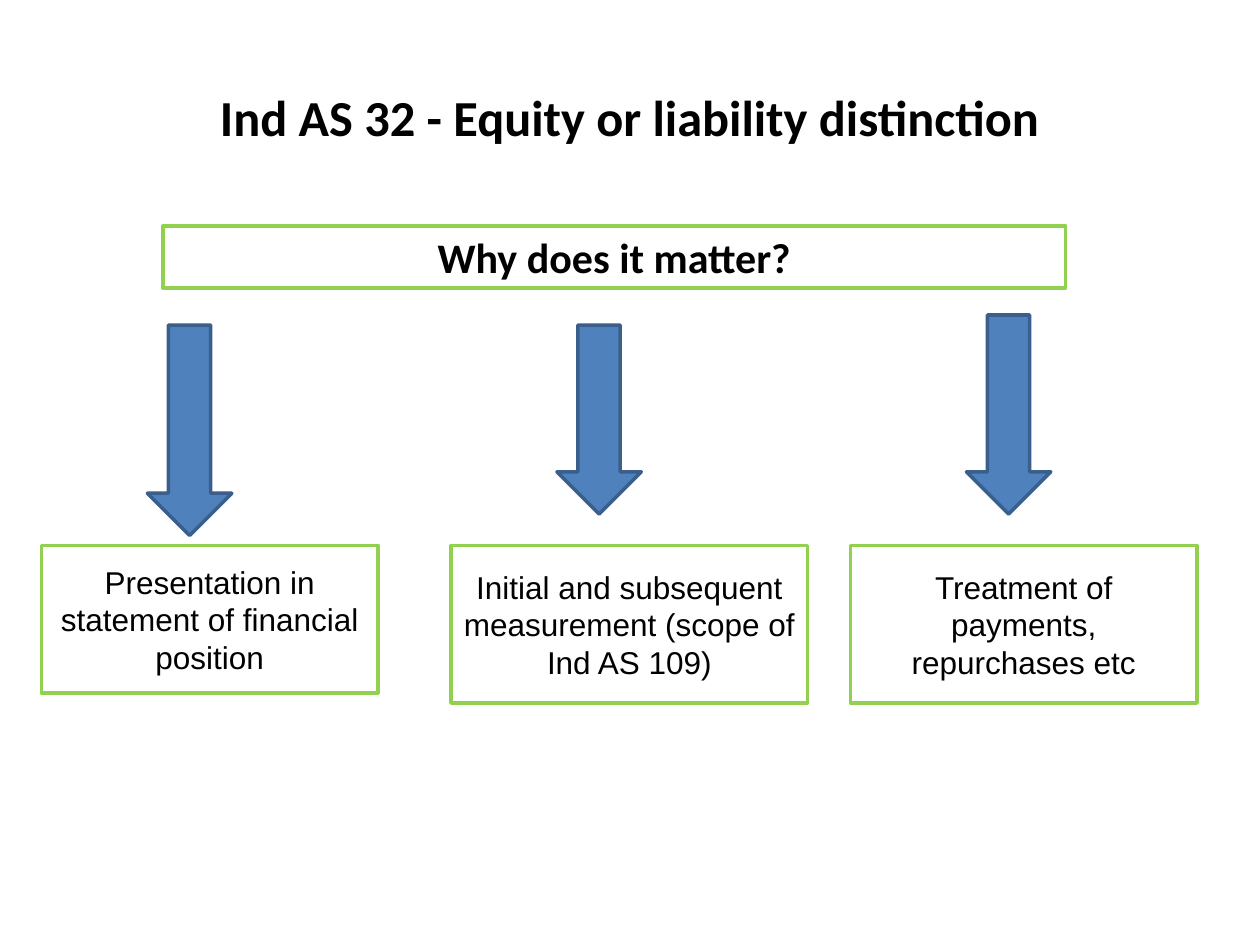
from pptx import Presentation
from pptx.dml.color import RGBColor
from pptx.enum.shapes import MSO_SHAPE
from pptx.enum.text import MSO_ANCHOR, PP_ALIGN
from pptx.util import Inches, Pt

BLACK = RGBColor(0x00, 0x00, 0x00)
WHITE = RGBColor(0xFF, 0xFF, 0xFF)
GREEN = RGBColor(0x92, 0xD0, 0x50)
BLUE = RGBColor(0x4F, 0x81, 0xBD)
DARK_BLUE = RGBColor(0x3A, 0x5F, 0x8C)


def add_box(page, kind, left, top, width, height, fill, line):
    box = page.shapes.add_shape(
        kind, Inches(left), Inches(top), Inches(width), Inches(height))
    box.shadow.inherit = False
    box.fill.solid()
    box.fill.fore_color.rgb = fill
    box.line.color.rgb = line
    box.line.width = Pt(2)
    return box


def write_text(box, text, font_name, size, bold=False):
    frame = box.text_frame
    frame.text = text
    frame.word_wrap = True
    frame.vertical_anchor = MSO_ANCHOR.MIDDLE
    for paragraph in frame.paragraphs:
        paragraph.alignment = PP_ALIGN.CENTER
        for span in paragraph.runs:
            span.font.name = font_name
            span.font.size = Pt(size)
            span.font.bold = bold
            span.font.color.rgb = BLACK


deck = Presentation()
deck.slide_width = Inches(10)
deck.slide_height = Inches(7.5)
page = deck.slides.add_slide(deck.slide_layouts[5])

title = page.shapes.title
title.left, title.top = Inches(0.5), Inches(0.3)
title.width, title.height = Inches(9), Inches(1.25)
write_text(title, "Ind AS 32 - Equity or liability distinction", "Calibri", 28.8, True)

question = add_box(page, MSO_SHAPE.MATH_MINUS, 0, 1, 9.75, 2.08, WHITE, GREEN)
write_text(question, "Why does it matter?", "Calibri", 24, True)

arrows = [(2.58, 1.67), (2.58, 1.5), (2.5, 1.58)]
for column, (top, height) in enumerate(arrows):
    add_box(page, MSO_SHAPE.DOWN_ARROW, 1.17 + 3.25 * column, top, 0.67, height,
            BLUE, DARK_BLUE)

reasons = [
    (0.33, 2.67, 1.17, "Presentation in statement of financial position"),
    (3.58, 2.83, 1.25, "Initial and subsequent measurement (scope of Ind AS 109)"),
    (6.75, 2.75, 1.25, "Treatment of payments,\nrepurchases etc"),
]
for left, width, height, text in reasons:
    reason = add_box(page, MSO_SHAPE.RECTANGLE, left, 4.33, width, height, WHITE, GREEN)
    write_text(reason, text, "Arial", 18)

deck.save("out.pptx")
